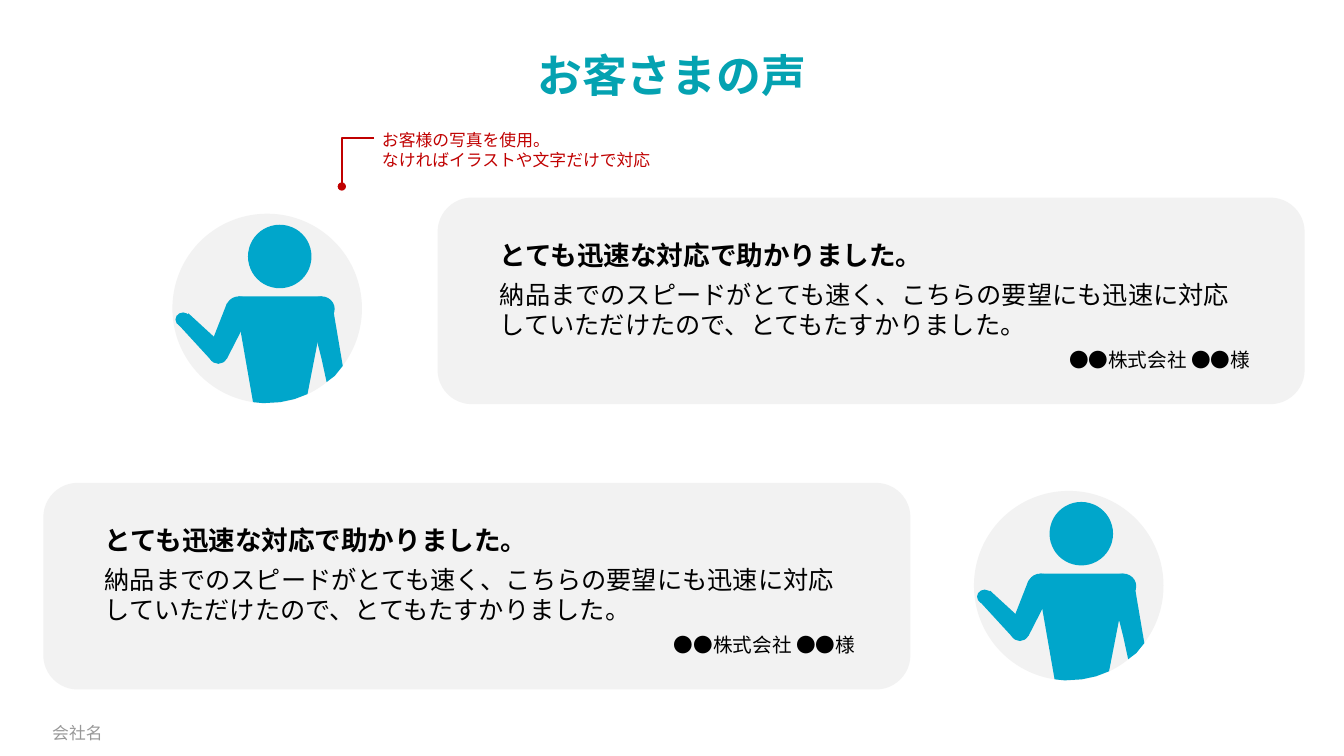
from pptx import Presentation, util as u
from pptx.dml.color import RGBColor
from pptx.enum import shapes, text
from pptx.oxml.ns import qn
from lxml import etree

PX = 9144  # 100 px to the inch
THEME = dict(
    teal="04A2B1", blue="00A6CB", panel="F2F2F2", red="C00000", black="000000", grey="989898",
    jp="Noto Sans CJK JP", latin="Calibri",
    title=32, heading=19, body=18, customer=14, small=12,
)
T = THEME
A = text.PP_ALIGN

prs = Presentation()
prs.slide_width, prs.slide_height = 1333 * PX, 750 * PX
s = prs.slides.add_slide(prs.slide_layouts[6])


def add_text(box, paras, color, font=T["jp"], inset=(10, 8, 10, 5), anchor="TOP", after=6, spacing=None):
    """Add a text box; each paragraph is (text, size, bold, alignment)."""
    tf = s.shapes.add_textbox(*[v * PX for v in box]).text_frame
    tf.word_wrap = True
    tf.vertical_anchor = text.MSO_ANCHOR[anchor]
    tf.margin_left, tf.margin_top, tf.margin_right, tf.margin_bottom = [v * PX for v in inset]
    for i, (words, size, bold, align) in enumerate(paras):
        p = tf.paragraphs[0] if i == 0 else tf.add_paragraph()
        p.text, p.alignment, p.space_after = words, align, u.Pt(after)
        if spacing:
            p.line_spacing = spacing
        for r in p.runs:
            r.font.size, r.font.bold, r.font.name = u.Pt(size), bold, font
            r.font.color.rgb = RGBColor.from_string(color)
            etree.SubElement(r._r.rPr, qn("a:ea")).set("typeface", T["jp"])


def add_filled(kind, geometry, color):
    """Add a preset shape from a box, or an outline (kind None) from its points."""
    if kind is None:
        fb = s.shapes.build_freeform(*geometry[0], scale=PX)
        fb.add_line_segments(geometry[1:], close=True)
        sp = fb.convert_to_shape()
    else:
        sp = s.shapes.add_shape(kind, *[v * PX for v in geometry])
    sp.shadow.inherit = False
    sp.fill.solid()
    sp.fill.fore_color.rgb = RGBColor.from_string(color)
    sp.line.fill.background()


# Title and footer
add_text((0, 36, 1333, 67), [("お客さまの声", T["title"], True, A.CENTER)], T["teal"],
         anchor="MIDDLE", after=0, spacing=1.1)
add_text((42, 707, 394, 40), [("会社名", T["small"], False, A.LEFT)], T["grey"],
         font=T["latin"], inset=(10, 5, 10, 5), anchor="MIDDLE", after=0)

# Person, measured from the corner of the backing circle
LIMBS = [
    [(148, 82), (66, 82), (53, 94), (66, 107), (80, 187), (90, 188), (107, 187),
     (121, 184), (134, 179), (148, 107), (160, 94)],  # torso
    [(54, 144), (36, 135), (54, 89), (77, 99)],  # raised upper arm
    [(5, 109), (16, 99), (53, 133), (39, 146)],  # raised forearm
    [(148, 144), (153, 167), (161, 161), (169, 151), (159, 92), (136, 97)],  # lowered arm
]
ROUNDS = [
    (3, 98, 15, 14),  # hand
    (53, 82, 26, 25), (135, 82, 26, 25),  # shoulders
    (36, 129, 19, 20),  # elbow
    (75, 11, 63, 63),  # head
]
VOICE = [
    ("とても迅速な対応で助かりました。", T["heading"], True, A.LEFT),
    ("納品までのスピードがとても速く、こちらの要望にも迅速に対応していただけたので、とてもたすかりました。",
     T["body"], False, A.LEFT),
    ("●●株式会社 ●●様", T["customer"], False, A.RIGHT),
]

# Customer voices: panel, words and person
OVAL = shapes.MSO_SHAPE.OVAL
for panel_x, panel_y, text_x, text_y, x, y in [(434, 196, 486, 229, 171, 212),
                                               (43, 479, 94, 512, 966, 487)]:
    add_filled(shapes.MSO_SHAPE.ROUNDED_RECTANGLE, (panel_x, panel_y, 860, 205), T["panel"])
    add_text((text_x, text_y, 764, 146), VOICE, T["black"])
    add_filled(OVAL, (x, y, 188, 188), T["panel"])
    for limb in LIMBS:
        add_filled(None, [(x + dx, y + dy) for dx, dy in limb], T["blue"])
    for dx, dy, w, h in ROUNDS:
        add_filled(OVAL, (x + dx, y + dy, w, h), T["blue"])

# Red note with its bent leader
fb = s.shapes.build_freeform(371, 137, scale=PX)
fb.add_line_segments([(339, 137), (339, 185)], close=False)
leader = fb.convert_to_shape()
leader.shadow.inherit = False
leader.fill.background()
leader.line.color.rgb = RGBColor.from_string(T["red"])
leader.line.width = u.Pt(1)
etree.SubElement(leader.line._get_or_add_ln(), qn("a:tailEnd")).set("type", "oval")
add_text((369, 121, 402, 39),
         [("お客様の写真を使用。\nなければイラストや文字だけで対応", T["small"], False, A.LEFT)], T["red"])

prs.save("out.pptx")
